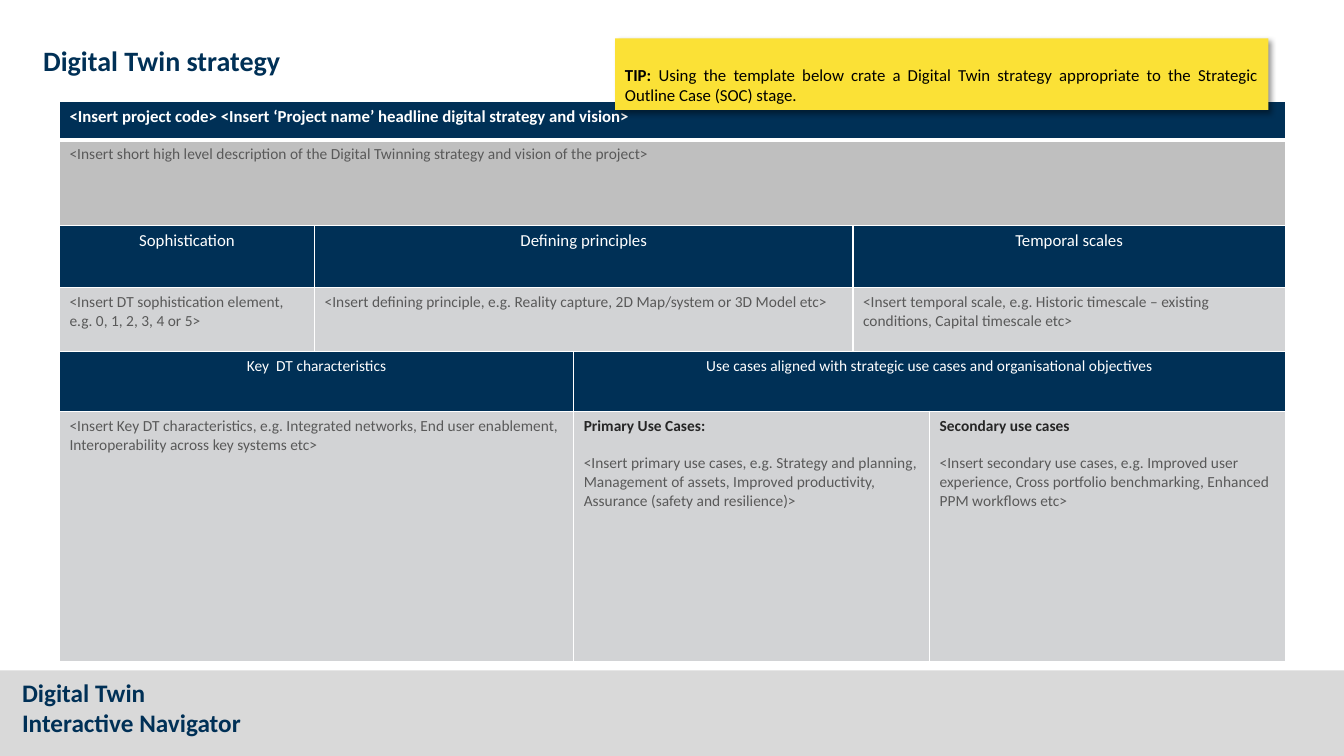
import dataclasses

import pptx
import pptx.dml.color
import pptx.enum.shapes
import pptx.enum.text
import pptx.oxml
import pptx.oxml.ns
import pptx.util

Inches = pptx.util.Inches
Pt = pptx.util.Pt
Align = pptx.enum.text.PP_ALIGN
Anchor = pptx.enum.text.MSO_ANCHOR


@dataclasses.dataclass(frozen=True)
class Theme:
    font: str = "Calibri"
    navy: str = "003056"
    white: str = "FFFFFF"
    black: str = "000000"
    description: str = "BFBFBF"
    entry: str = "D2D3D5"
    footer: str = "D9D9D9"
    tip: str = "FBE136"
    prompt: str = "595959"
    heading: str = "262626"
    title_size: int = 20
    footer_size: int = 18
    label_size: int = 12
    body_size: int = 11


THEME = Theme()
COLUMN_WIDTHS = [2.53, 2.57, 2.77, 0.76, 3.53]
ROW_HEIGHTS = [0.38, 0.85, 0.61, 0.64, 0.59, 2.48]
BLANK_LINE = 13.4


def rgb(value):
    return pptx.dml.color.RGBColor.from_string(value)


def apply_formats(target, formats):
    for name, value in formats.items():
        setattr(target, name, value)


def run_of(text, size, color, bold=False):
    return text, {"name": THEME.font, "size": Pt(size), "bold": bold}, color


def write_paragraphs(frame, paragraphs, formats, gap=0):
    for index, runs in enumerate(paragraphs):
        paragraph = frame.add_paragraph() if index else frame.paragraphs[0]
        apply_formats(paragraph, formats)
        if index and gap:
            paragraph.space_before = Pt(gap)
        for text, font_formats, color in runs:
            run = paragraph.add_run()
            run.text = text
            apply_formats(run.font, font_formats)
            run.font.color.rgb = rgb(color)


def add_block(slide, box, color):
    block = slide.shapes.add_shape(
        pptx.enum.shapes.MSO_SHAPE.RECTANGLE, *map(Inches, box))
    block.shadow.inherit = False
    block.fill.solid()
    block.fill.fore_color.rgb = rgb(color)
    block.line.fill.background()
    return block


def add_label(slide, box, lines, size):
    label = slide.shapes.add_textbox(*map(Inches, box))
    label.text_frame.word_wrap = True
    write_paragraphs(label.text_frame,
                     [[run_of(line, size, THEME.navy, True)] for line in lines],
                     {"alignment": Align.LEFT})


def add_footer(slide, box):
    left, top, width, height = box
    add_block(slide, box, THEME.footer)
    add_label(slide, (left + 0.12, top + 0.02, 4.05, 0.71),
              ["Digital Twin", "Interactive Navigator"], THEME.footer_size)


def add_tip(slide, box):
    tip = add_block(slide, box, THEME.tip)
    effects = tip._element.spPr.find(pptx.oxml.ns.qn("a:effectLst"))
    effects.append(pptx.oxml.parse_xml(
        f'<a:outerShdw {pptx.oxml.ns.nsdecls("a")} blurRad="{Pt(4)}" '
        f'dist="{Pt(3)}" dir="2700000" algn="tl" rotWithShape="0">'
        f'<a:srgbClr val="{THEME.black}"><a:alpha val="40000"/></a:srgbClr>'
        '</a:outerShdw>'))
    apply_formats(tip.text_frame,
                  {"word_wrap": True, "vertical_anchor": Anchor.BOTTOM})
    message = ("Using the template below crate a Digital Twin strategy "
               "appropriate to the Strategic Outline Case (SOC) stage.")
    write_paragraphs(tip.text_frame,
                     [[run_of("TIP: ", THEME.label_size, THEME.black, True),
                       run_of(message, THEME.label_size, THEME.black)]],
                     {"alignment": Align.JUSTIFY})


def set_borders(cell, bottom_width):
    properties = cell._tc.get_or_add_tcPr()
    widths = {"lnL": 1, "lnR": 1, "lnT": 1, "lnB": bottom_width}
    for index, (side, width) in enumerate(widths.items()):
        properties.insert(index, pptx.oxml.parse_xml(
            f'<a:{side} {pptx.oxml.ns.nsdecls("a")} w="{Pt(width)}">'
            f'<a:solidFill><a:srgbClr val="{THEME.white}"/></a:solidFill>'
            f'</a:{side}>'))


def header(text, size):
    return THEME.navy, Align.CENTER, [[run_of(text, size, THEME.white)]]


def entry(text, heading=None, fill=THEME.entry):
    paragraphs = [[run_of(text, THEME.body_size, THEME.prompt)]]
    if heading:
        paragraphs.insert(
            0, [run_of(heading, THEME.body_size, THEME.heading, True)])
    return fill, Align.LEFT, paragraphs


def strategy_rows():
    banner = ("<Insert project code> <Insert ‘Project name’ headline digital "
              "strategy and vision>")
    return [
        [(5, (THEME.navy, Align.LEFT,
              [[run_of(banner, THEME.label_size, THEME.white, True)]]))],
        [(5, entry("<Insert short high level description of the Digital "
                   "Twinning strategy and vision of the project>",
                   fill=THEME.description))],
        [(1, header("Sophistication", THEME.label_size)),
         (2, header("Defining principles", THEME.label_size)),
         (2, header("Temporal scales", THEME.label_size))],
        [(1, entry("<Insert DT sophistication element, e.g. 0, 1, 2, 3, 4 or 5>")),
         (2, entry("<Insert defining principle, e.g. Reality capture, "
                   "2D Map/system or 3D Model etc>")),
         (2, entry("<Insert temporal scale, e.g. Historic timescale – existing "
                   "conditions, Capital timescale etc>"))],
        [(2, header("Key  DT characteristics", THEME.body_size)),
         (3, header("Use cases aligned with strategic use cases and "
                    "organisational objectives", THEME.body_size))],
        [(2, entry("<Insert Key DT characteristics, e.g. Integrated networks, "
                   "End user enablement, Interoperability across key systems etc>")),
         (2, entry("<Insert primary use cases, e.g. Strategy and planning, "
                   "Management of assets, Improved productivity, Assurance "
                   "(safety and resilience)>", "Primary Use Cases:")),
         (1, entry("<Insert secondary use cases, e.g. Improved user experience, "
                   "Cross portfolio benchmarking, Enhanced PPM workflows etc>",
                   "Secondary use cases"))],
    ]


def add_strategy_table(slide, box):
    strategy = slide.shapes.add_table(
        len(ROW_HEIGHTS), len(COLUMN_WIDTHS), *map(Inches, box)).table
    apply_formats(strategy, {"first_row": False, "horz_banding": False})
    for column, width in zip(strategy.columns, COLUMN_WIDTHS):
        column.width = Inches(width)
    for row, height in zip(strategy.rows, ROW_HEIGHTS):
        row.height = Inches(height)
    for row_index, sections in enumerate(strategy_rows()):
        start = 0
        for span, (fill, alignment, paragraphs) in sections:
            for column_index in range(start, start + span):
                cell = strategy.cell(row_index, column_index)
                cell.fill.solid()
                cell.fill.fore_color.rgb = rgb(fill)
                set_borders(cell, 1 if row_index else 3)
            section = strategy.cell(row_index, start)
            if span > 1:
                section.merge(strategy.cell(row_index, start + span - 1))
            write_paragraphs(section.text_frame, paragraphs,
                             {"alignment": alignment}, BLANK_LINE)
            start += span


def build_strategy_slide(deck):
    slide = deck.slides.add_slide(deck.slide_layouts[6])
    add_footer(slide, (0, 6.65, 13.33, 0.85))
    add_strategy_table(
        slide, (0.59, 1.01, sum(COLUMN_WIDTHS), sum(ROW_HEIGHTS)))
    add_label(slide, (0.33, 0.38, 3.5, 0.44),
              ["Digital Twin strategy"], THEME.title_size)
    add_tip(slide, (6.1, 0.38, 6.48, 0.71))


def main():
    deck = pptx.Presentation()
    apply_formats(deck, {"slide_width": Inches(13.33),
                         "slide_height": Inches(7.5)})
    build_strategy_slide(deck)
    deck.save("out.pptx")


if __name__ == "__main__":
    main()
